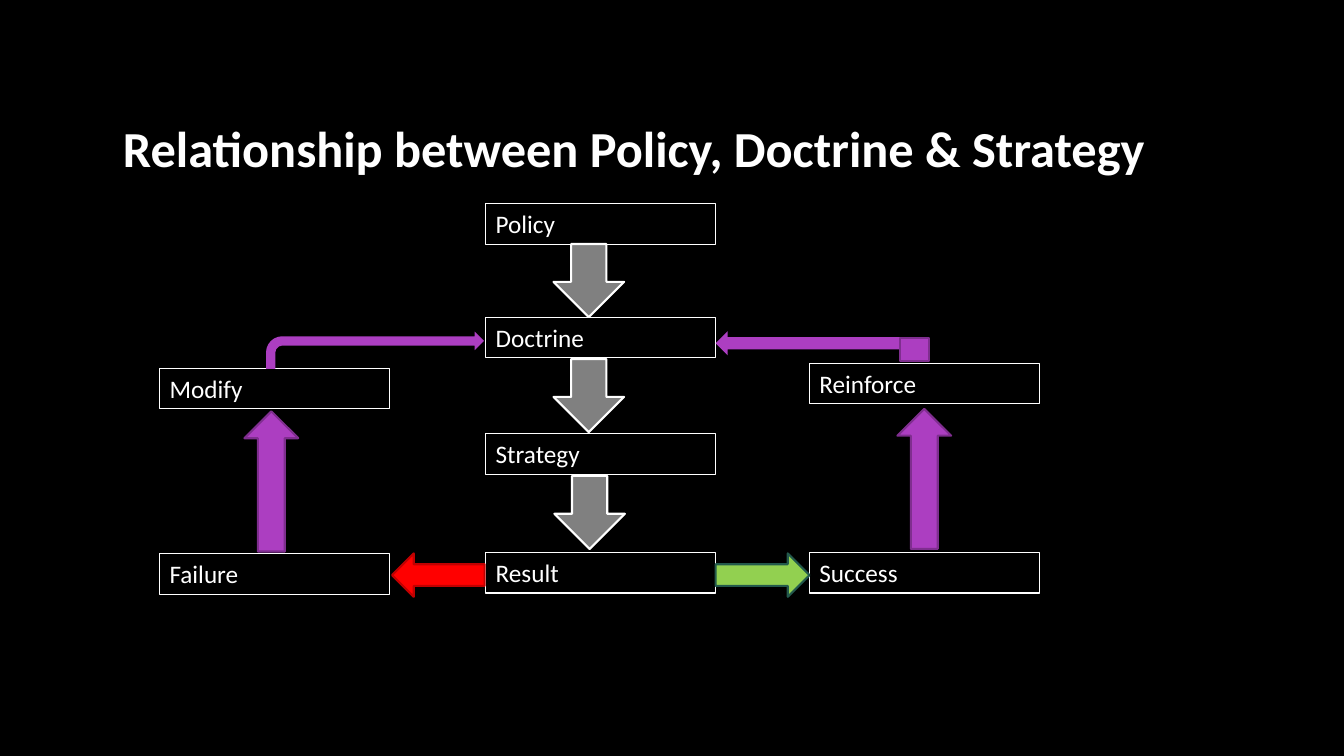
import pptx
import pptx.util
import pptx.dml.color
import pptx.enum.shapes
import pptx.enum.text

Pt = pptx.util.Pt
SHAPE = pptx.enum.shapes.MSO_SHAPE
ALIGN = pptx.enum.text.PP_ALIGN
ANCHOR = pptx.enum.text.MSO_ANCHOR
COLORS = {
    "black": "000000", "white": "FFFFFF", "gray": "808080",
    "red": "FF0000", "dark red": "C00000",
    "green": "92D050", "dark green": "23594C",
    "purple": "AC3EC1", "dark purple": "7F2E8F",
}


def rgb(name):
    return pptx.dml.color.RGBColor.from_string(COLORS[name])


def add_preset(kind, left, top, width, height, fill=None, line=None, weight=1.5):
    """Add a shadowless preset shape; None leaves out its fill or line."""
    sp = s.shapes.add_shape(kind, Pt(left), Pt(top), Pt(width), Pt(height))
    sp.shadow.inherit = False
    for format_fill, color in ((sp.fill, fill), (sp.line.fill, line)):
        if color:
            format_fill.solid()
            format_fill.fore_color.rgb = rgb(color)
        else:
            format_fill.background()
    if line:
        sp.line.width = Pt(weight)
    return sp


prs = pptx.Presentation()
prs.slide_width, prs.slide_height = Pt(960), Pt(540)
s = prs.slides.add_slide(prs.slide_layouts[5])
s.background.fill.solid()
s.background.fill.fore_color.rgb = rgb("black")

# Title
title = s.shapes.title
title.left, title.top, title.width, title.height = Pt(54), Pt(48), Pt(798), Pt(114.5)
tf = title.text_frame
tf.word_wrap = True
tf.vertical_anchor = ANCHOR.MIDDLE
p = tf.paragraphs[0]
p.alignment = ALIGN.CENTER
r = p.add_run()
r.text = "Relationship between Policy, Doctrine & Strategy"
r.font.name, r.font.size, r.font.bold = "Calibri", Pt(36), True
r.font.color.rgb = rgb("white")

# Labelled boxes in three columns
BOX_W, BOX_H = 164.2, 29.1
LEFT, MIDDLE, RIGHT = 114, 347, 578.2
boxes = [
    ("Reinforce", RIGHT, 259.3),
    ("Doctrine", MIDDLE, 226.6),
    ("Policy", MIDDLE, 145.3),
    ("Strategy", MIDDLE, 309.6),
    ("Result", MIDDLE, 394.5),
    ("Modify", LEFT, 262.9),
    ("Failure", LEFT, 395.5),
    ("Success", RIGHT, 394.5),
]
for label, left, top in boxes:
    sp = add_preset(SHAPE.RECTANGLE, left, top, BOX_W, BOX_H, line="white", weight=0.75)
    tf = sp.text_frame
    tf.word_wrap = True
    tf.auto_size = pptx.enum.text.MSO_AUTO_SIZE.SHAPE_TO_FIT_TEXT
    tf.vertical_anchor = ANCHOR.TOP
    p = tf.paragraphs[0]
    p.alignment = ALIGN.LEFT
    r = p.add_run()
    r.text = label
    r.font.name, r.font.size = "Calibri", Pt(18)
    r.font.color.rgb = rgb("white")

# Policy to doctrine to strategy to result
for left, top in ((395.4, 174.3), (395.4, 256.5), (396, 340)):
    add_preset(SHAPE.DOWN_ARROW, left, top, 50.4, 52.2, "gray", "white")

# Result to failure and success
add_preset(SHAPE.LEFT_ARROW, 280, 395.3, 66.2, 31, "red", "dark red")
add_preset(SHAPE.RIGHT_ARROW, 511.2, 395.3, 67, 31, "green", "dark green")

# Feedback to doctrine
for left, top in ((174.6, 293.8), (641, 292)):
    add_preset(SHAPE.UP_ARROW, left, top, 38.4, 100.1, "purple", "dark purple")
add_preset(SHAPE.BENT_ARROW, 190, 236.9, 155.7, 26.6, "purple")
add_preset(SHAPE.LEFT_ARROW, 511.2, 236.6, 131.8, 17.3, "purple")
add_preset(SHAPE.RECTANGLE, 643, 241.4, 20.6, 16.6, "purple", "dark purple")

prs.save("out.pptx")
